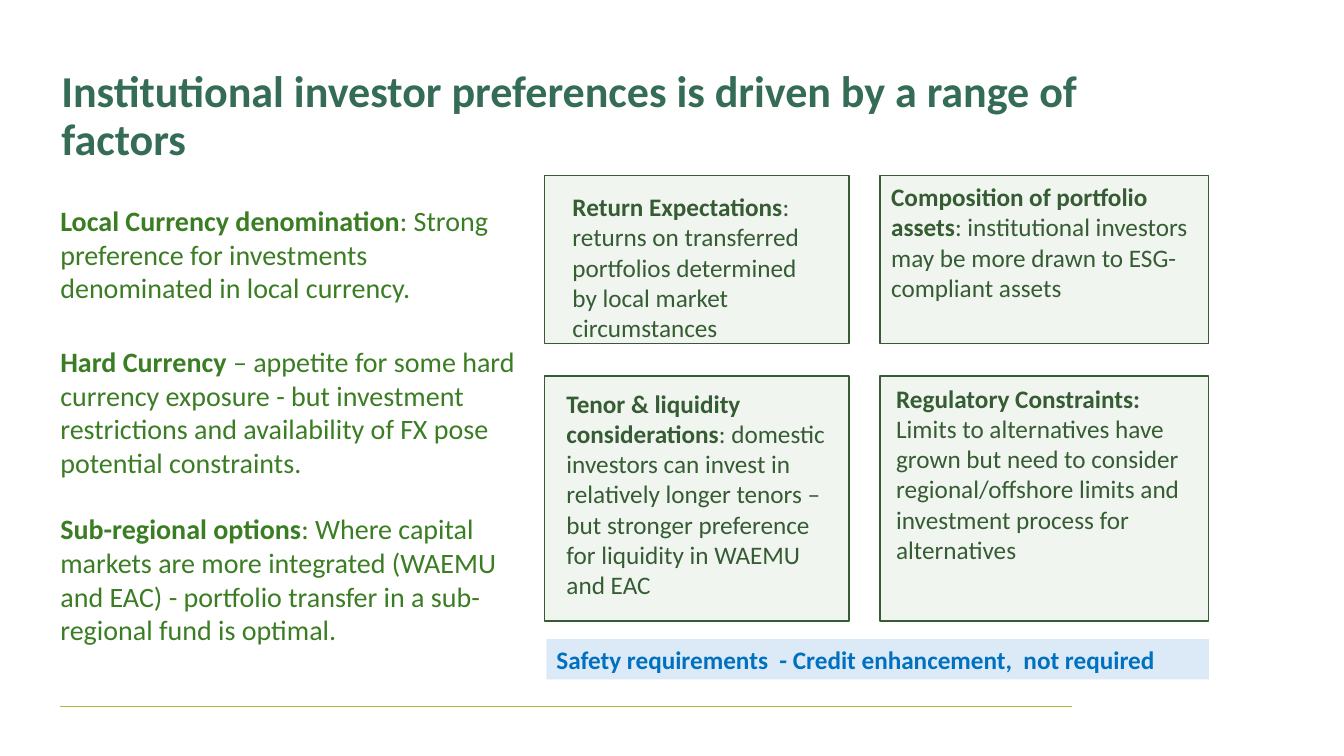
import pptx
import pptx.util
import pptx.dml.color
import pptx.enum.shapes
import pptx.enum.text
import pptx.oxml.ns
import lxml.etree

RGB = pptx.dml.color.RGBColor
SHAPE = pptx.enum.shapes.MSO_SHAPE
TEAL = RGB(0x35, 0x6C, 0x55)
LEAF = RGB(0x3B, 0x7D, 0x23)
PINE = RGB(0x36, 0x5C, 0x33)
MINT = RGB(0xF0, 0xF5, 0xF0)
BLUE = RGB(0x00, 0x70, 0xC0)
SKY = RGB(0xDC, 0xEA, 0xF7)
LIME = RGB(0xA0, 0xBE, 0x44)

# All lengths are px, 100 to the inch
PX = 9144
TITLE = "Institutional investor preferences is driven by a range of factors"
SAFETY = "Safety requirements  - Credit enhancement,  not required"

# (left, top, width, height), bold lead, rest
POINTS = [
    ((50, 197, 475, 111), "Local Currency denomination",
     ": Strong preference for investments denominated in local currency."),
    ((50, 337, 475, 145), "Hard Currency ",
     "– appetite for some hard currency exposure - but investment "
     "restrictions and availability of FX pose potential constraints."),
    ((50, 503, 462, 145), "Sub-regional options",
     ": Where capital markets are more integrated (WAEMU and EAC) - "
     "portfolio transfer in a sub-regional fund is optimal."),
]
# Row by row in the grid of cards
CARDS = [
    ((558, 185, 253, 162), "Return Expectations",
     ": returns on transferred portfolios determined by local market "
     "circumstances"),
    ((874, 175, 325, 162), "Composition of portfolio assets",
     ": institutional investors may be more drawn to ESG-compliant assets"),
    ((552, 380, 279, 222), "Tenor & liquidity considerations",
     ": domestic investors can invest in relatively longer tenors – but "
     "stronger preference for liquidity in WAEMU and EAC"),
    ((879, 375, 316, 192), "Regulatory Constraints: ",
     " Limits to alternatives have grown but need to consider "
     "regional/offshore limits and investment process for alternatives"),
]
COLS = [(540, 302), (873, 326)]
ROWS = [(174, 167), (373, 243)]

deck = pptx.Presentation()
deck.slide_width, deck.slide_height = 1333 * PX, 750 * PX
slide = deck.slides.add_slide(deck.slide_layouts[6])
shapes = slide.shapes


def scale(box):
    return [n * PX for n in box]


def panel(box, fill, edge=None):
    shape = shapes.add_shape(SHAPE.RECTANGLE, *scale(box))
    shape.shadow.inherit = False
    shape.fill.solid()
    shape.fill.fore_color.rgb = fill
    if edge is None:
        shape.line.fill.background()
    else:
        shape.line.color.rgb = edge
        shape.line.width = pptx.util.Pt(1)
    return shape


def write(box, lead, rest="", size=18, color=PINE, inset=True, space=None):
    """Add a text box with a bold lead followed by plain text."""
    frame = shapes.add_textbox(*scale(box)).text_frame
    frame.word_wrap = True
    frame.vertical_anchor = pptx.enum.text.MSO_ANCHOR.TOP
    if not inset:
        frame.margin_left = frame.margin_right = 0
        frame.margin_top = frame.margin_bottom = 0
    para = frame.paragraphs[0]
    if space:
        para.line_spacing = space
    for text, bold in ((lead, True), (rest, False)):
        if text:
            run = para.add_run()
            run.text = text
            run.font.name = "Calibri"
            run.font.size = pptx.util.Pt(size)
            run.font.bold = bold
            run.font.color.rgb = color


rule = shapes.add_connector(pptx.enum.shapes.MSO_CONNECTOR.STRAIGHT,
                            *scale((60, 701, 1063, 701)))
rule.line.color.rgb = LIME
rule.line.width = pptx.util.Pt(0.6)
lxml.etree.SubElement(rule._element.spPr, pptx.oxml.ns.qn("a:effectLst"))

write((61, 69, 1034, 73), TITLE, size=31.5, color=TEAL, inset=False, space=0.9)
for box, lead, rest in POINTS:
    write(box, lead, rest, size=20, color=LEAF)

for i, (box, lead, rest) in enumerate(CARDS):
    left, width = COLS[i % 2]
    top, height = ROWS[i // 2]
    panel((left, top, width, height), MINT, PINE)
    write(box, lead, rest)

band = (542, 634, 657, 40)
panel(band, SKY)
write(band, SAFETY, color=BLUE)

deck.save("out.pptx")
